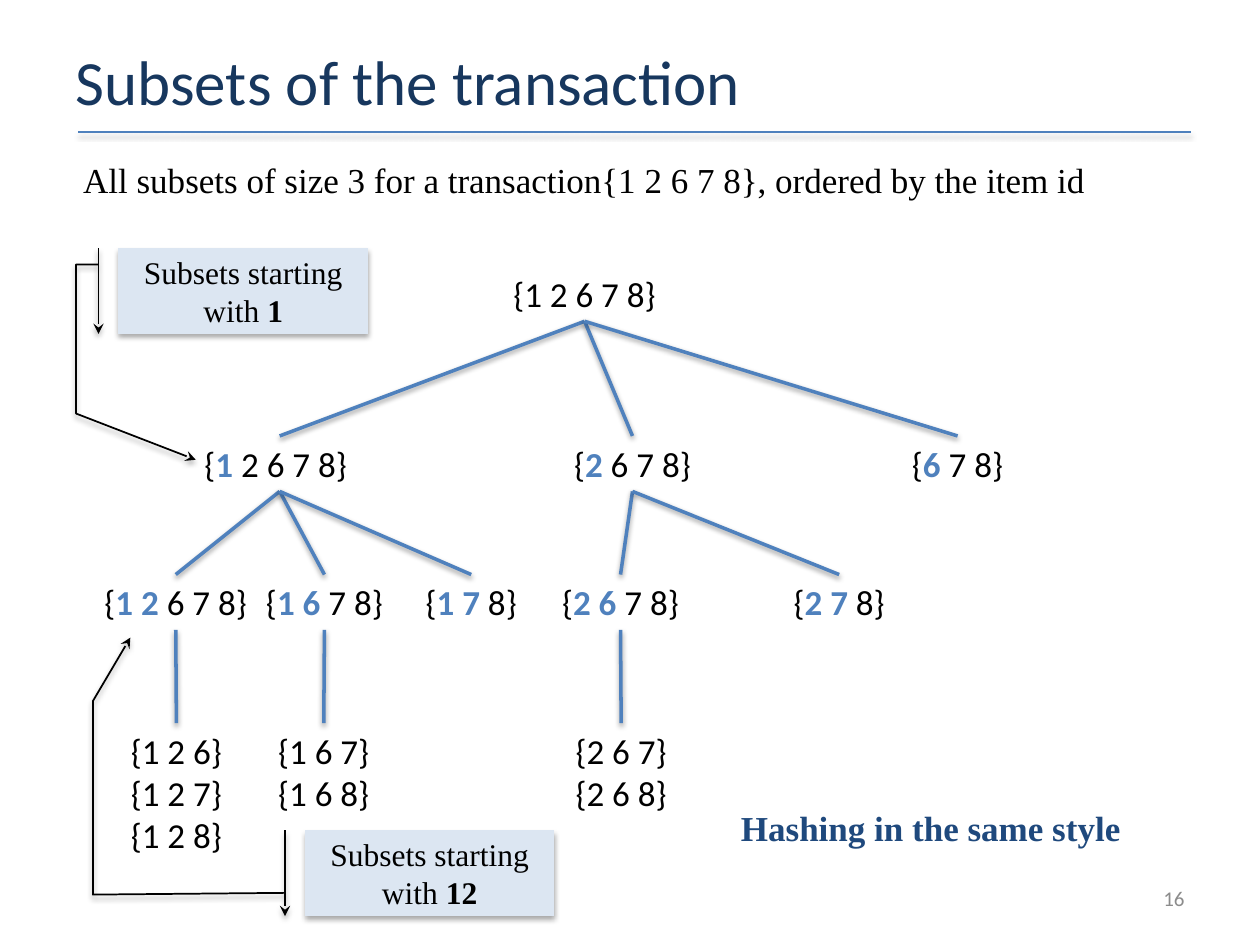
import pptx
import pptx.util
import pptx.dml.color
import pptx.enum.shapes
import pptx.enum.text
import pptx.oxml.ns
import lxml.etree

Inches = pptx.util.Inches
Pt = pptx.util.Pt
Align = pptx.enum.text.PP_ALIGN
Anchor = pptx.enum.text.MSO_ANCHOR
SANS, SERIF = "Calibri", "Times New Roman"
BLACK, BLUE = "000000", "4F81BD"
BOTTOM, TOP = 2, 0

NODES = {
    "root": ((3.94, 2.11, 1.4, 0.44), [("", "{1 2 6 7 8}")]),
    "1": ((1.52, 3.46, 1.4, 0.44), [("1 ", "2 6 7 8} ")]),
    "2": ((4.32, 3.46, 1.4, 0.44), [("2", " 6 7 8}")]),
    "6": ((6.9, 3.46, 1.4, 0.44), [("6 ", "7 8}")]),
    "1 2": ((0.69, 4.56, 1.41, 0.44), [("1 2", " 6 7 8}")]),
    "1 6": ((1.87, 4.56, 1.41, 0.44), [("1 6", " 7 8}")]),
    "1 7": ((3.04, 4.56, 1.4, 0.44), [("1 7", " 8}")]),
    "2 6": ((4.32, 4.56, 1.21, 0.44), [("2 6", " 7 8}")]),
    "2 7": ((6.15, 4.56, 1.02, 0.44), [("2 7", " 8}")]),
    "1 2 leaves": ((0.93, 5.74, 0.94, 1.11), [("", "{1 2 6}"), ("", "{1 2 7}"), ("", "{1 2 8}")]),
    "1 6 leaves": ((2.1, 5.74, 0.94, 0.77), [("", "{1 6 7}"), ("", "{1 6 8}")]),
    "2 6 leaves": ((4.46, 5.74, 0.94, 0.77), [("", "{2 6 7}"), ("", "{2 6 8}")]),
}
CHILDREN = {
    "root": ["1", "2", "6"],
    "1": ["1 2", "1 6", "1 7"],
    "2": ["2 6", "2 7"],
    "1 2": ["1 2 leaves"],
    "1 6": ["1 6 leaves"],
    "2 6": ["2 6 leaves"],
}


def color(value):
    """Return the colour for a hex string."""
    return pptx.dml.color.RGBColor.from_string(value)


def place(box):
    """Return the four lengths of a box given in inches."""
    return [Inches(length) for length in box]


def set_font(font, name, size, value, bold=False):
    """Set the face, size, colour and weight of a font."""
    font.name, font.size, font.bold = name, Pt(size), bold
    font.color.rgb = color(value)


def add_shadow(shape, alpha, distance):
    """Give a shape or connector a soft shadow below it."""
    properties = shape._element.spPr
    tag = pptx.oxml.ns.qn
    for old in properties.findall(tag("a:effectLst")):
        properties.remove(old)
    effects = lxml.etree.SubElement(properties, tag("a:effectLst"))
    shadow = lxml.etree.SubElement(
        effects, tag("a:outerShdw"), blurRad=str(Pt(3.1)),
        dist=str(Pt(distance)), dir="5400000", rotWithShape="0")
    tint = lxml.etree.SubElement(shadow, tag("a:srgbClr"), val=BLACK)
    lxml.etree.SubElement(tint, tag("a:alpha"), val=str(alpha * 1000))


def add_line(page, start, end, width):
    """Draw a straight blue line with a shadow."""
    line = page.shapes.add_connector(
        pptx.enum.shapes.MSO_CONNECTOR.STRAIGHT, *place(start + end))
    line.line.color.rgb = color(BLUE)
    line.line.width = Pt(width)
    add_shadow(line, 38, 1.6)
    return line


def add_heading(page, box):
    """Place the title and the rule under it."""
    title = page.shapes.title
    title.left, title.top, title.width, title.height = place(box)
    title.text_frame.text = "Subsets of the transaction"
    title.text_frame.vertical_anchor = Anchor.MIDDLE
    para = title.text_frame.paragraphs[0]
    para.alignment = Align.LEFT
    set_font(para.font, SANS, 36, "17375E")
    left, top, width, height = box
    rule = top + height + 0.06
    add_line(page, (left + 0.12, rule), (left + width - 0.05, rule), 1)


def add_statement(page, box, text, value, bold=False):
    """Write one line of serif text."""
    frame = page.shapes.add_textbox(*place(box)).text_frame
    frame.word_wrap = True
    frame.margin_left = Inches(0.16)
    para = frame.paragraphs[0]
    para.text = text
    para.space_before = Pt(4)
    set_font(para.font, SERIF, 20, value, bold)


def add_page_number(page, box, number):
    """Write the page number at the right of its box."""
    frame = page.shapes.add_textbox(*place(box)).text_frame
    frame.word_wrap = True
    frame.vertical_anchor = Anchor.MIDDLE
    para = frame.paragraphs[0]
    para.text = number
    para.alignment = Align.RIGHT
    set_font(para.font, SANS, 12, "8C8C8C")


def add_node(page, box, sets):
    """Write a node of item sets, with each fixed prefix in bold blue."""
    node = page.shapes.add_textbox(*place(box))
    frame = node.text_frame
    frame.word_wrap = False
    for index, (prefix, rest) in enumerate(sets):
        para = frame.add_paragraph() if index else frame.paragraphs[0]
        para.alignment = Align.CENTER
        set_font(para.font, SANS, 20, BLACK)
        if prefix:
            para.add_run().text = "{"
            span = para.add_run()
            span.text = prefix
            span.font.bold = True
            span.font.color.rgb = color(BLUE)
        para.add_run().text = rest
    return node


def add_tree(page):
    """Place the nodes and join each parent to its children."""
    nodes = {name: add_node(page, *parts) for name, parts in NODES.items()}
    for parent, names in CHILDREN.items():
        for name in names:
            branch = add_line(page, (0, 0), (1, 1), 2)
            branch.begin_connect(nodes[parent], BOTTOM)
            branch.end_connect(nodes[name], TOP)


def add_callout(page, box, prefix, bends):
    """Place a callout whose bent leader points to a node."""
    kind = pptx.enum.shapes.MSO_SHAPE.LINE_CALLOUT_3_ACCENT_BAR
    callout = page.shapes.add_shape(kind, *place(box))
    for index, bend in enumerate(bends):
        callout.adjustments[index] = bend
    callout.fill.solid()
    callout.fill.fore_color.rgb = color("DCE6F2")
    callout.line.color.rgb = color(BLACK)
    callout.line.width = Pt(1)
    lxml.etree.SubElement(
        callout.line._get_or_add_ln(), pptx.oxml.ns.qn("a:tailEnd"), type="stealth")
    add_shadow(callout, 35, 1.8)
    frame = callout.text_frame
    frame.word_wrap = True
    frame.vertical_anchor = Anchor.MIDDLE
    para = frame.paragraphs[0]
    para.alignment = Align.CENTER
    set_font(para.font, SERIF, 18, BLACK)
    para.add_run().text = "Subsets starting with "
    span = para.add_run()
    span.text = prefix
    span.font.bold = True


def main():
    """Build the slide and save it."""
    deck = pptx.Presentation()
    deck.slide_width, deck.slide_height = Inches(10), Inches(7.5)
    page = deck.slides.add_slide(deck.slide_layouts.get_by_name("Title Only"))
    add_heading(page, (0.5, 0.28, 9, 0.71))
    add_tree(page)
    add_statement(
        page, (0.5, 1.21, 9, 0.59),
        "All subsets of size 3 for a transaction{1 2 6 7 8}, ordered by the item id", BLACK)
    add_callout(page, (0.94, 1.97, 1.98, 0.68), "1",
                (0.19, -0.08, 0.19, -0.17, 1.93, -0.17, 2.47, 0.31))
    add_callout(page, (2.42, 6.59, 1.98, 0.68), "12",
                (0.73, -0.08, 0.75, -0.85, -1.51, -0.85, -2.25, -0.7))
    add_statement(page, (5.72, 6.35, 3.78, 0.58), "Hashing in the same style", "1F497D", True)
    add_page_number(page, (7.17, 6.93, 2.33, 0.4), "16")
    deck.save("out.pptx")


if __name__ == "__main__":
    main()
